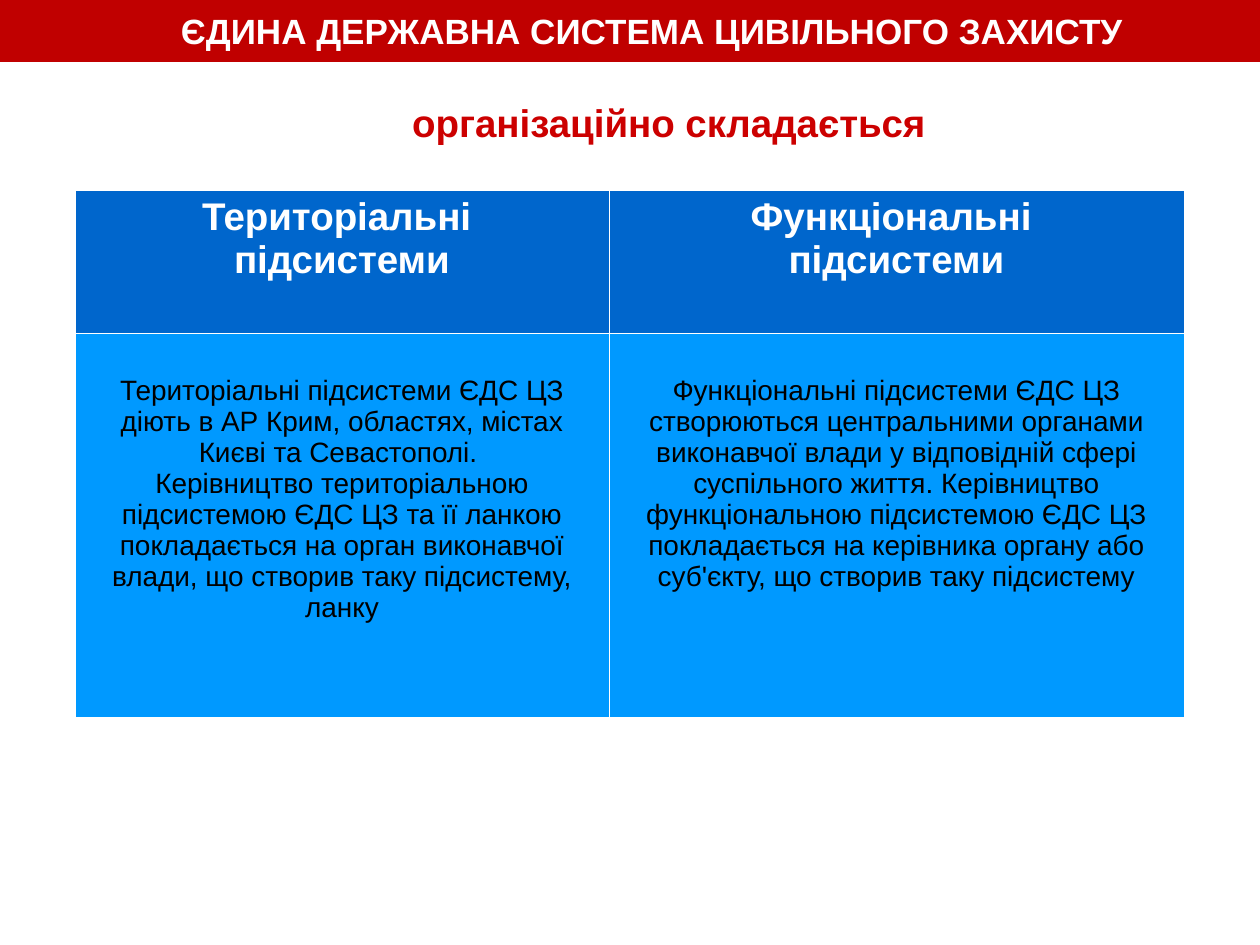
import pptx
import pptx.util
import pptx.dml.color
import pptx.enum.shapes
import pptx.enum.text
import pptx.oxml
import pptx.oxml.ns

RGBColor = pptx.dml.color.RGBColor
WHITE = RGBColor(255, 255, 255)
BLACK = RGBColor(0, 0, 0)
RED = RGBColor(0xCC, 0, 0)
BANNER = RGBColor(0xC0, 0, 0)
BLUE = RGBColor(0, 0x66, 0xCC)
SKY = RGBColor(0, 0x99, 0xFF)

HEADS = ["Територіальні \nпідсистеми", "Функціональні \nпідсистеми"]
BODIES = [
    "Територіальні підсистеми ЄДС ЦЗ діють в АР Крим, областях, містах "
    "Києві та Севастополі. \nКерівництво територіальною підсистемою ЄДС ЦЗ "
    "та її ланкою покладається на орган виконавчої влади, що створив таку "
    "підсистему, ланку",
    "Функціональні підсистеми ЄДС ЦЗ створюються центральними органами "
    "виконавчої влади у відповідній сфері суспільного життя. Керівництво "
    "функціональною підсистемою ЄДС ЦЗ покладається на керівника органу або "
    "суб'єкту, що створив таку підсистему",
]
COLS = [534, 575]
ROWS = [143, 384]


def px(n):
    return pptx.util.Emu(round(n * 914400 / 126))


def write(frame, text, size, color, bold):
    frame.text = text
    frame.word_wrap = True
    for para in frame.paragraphs:
        para.alignment = pptx.enum.text.PP_ALIGN.CENTER
        for run in para.runs:
            run.font.name = "Arial"
            run.font.size = pptx.util.Pt(size)
            run.font.bold = bold
            run.font.color.rgb = color


def add_label(slide, box, text, size, color, fill=None):
    rect = pptx.enum.shapes.MSO_SHAPE.RECTANGLE
    shape = slide.shapes.add_shape(rect, *map(px, box))
    shape.shadow.inherit = False
    shape.line.fill.background()
    if fill is None:
        shape.fill.background()
    else:
        shape.fill.solid()
        shape.fill.fore_color.rgb = fill
    shape.text_frame.vertical_anchor = pptx.enum.text.MSO_ANCHOR.MIDDLE
    write(shape.text_frame, text, size, color, True)


def add_edges(cell):
    props = cell._tc.get_or_add_tcPr()
    space = pptx.oxml.ns.nsdecls("a")
    for spot, side in enumerate("LRTB"):
        edge = pptx.oxml.parse_xml(
            f'<a:ln{side} {space} w="762"><a:solidFill>'
            f'<a:srgbClr val="{WHITE}"/></a:solidFill></a:ln{side}>')
        props.insert(spot, edge)


def fill_row(table, row, texts, size, color, bold, fill, top):
    for col, text in enumerate(texts):
        cell = table.cell(row, col)
        cell.fill.solid()
        cell.fill.fore_color.rgb = fill
        cell.margin_top = px(top)
        write(cell.text_frame, text, size, color, bold)
        add_edges(cell)


def add_grid(slide):
    box = (75, 190, sum(COLS), sum(ROWS))
    table = slide.shapes.add_table(2, 2, *map(px, box)).table
    for col, width in zip(table.columns, COLS):
        col.width = px(width)
    for row, height in zip(table.rows, ROWS):
        row.height = px(height)
    fill_row(table, 0, HEADS, 22, WHITE, True, BLUE, 6)
    fill_row(table, 1, BODIES, 16, BLACK, False, SKY, 42)


def main():
    deck = pptx.Presentation()
    deck.slide_width, deck.slide_height = px(1260), px(945)
    slide = deck.slides.add_slide(deck.slide_layouts[6])
    add_label(slide, (188, 91, 962, 62), "організаційно складається", 22, RED)
    add_grid(slide)
    add_label(slide, (-4, -2, 1312, 64),
              "ЄДИНА ДЕРЖАВНА СИСТЕМА ЦИВІЛЬНОГО ЗАХИСТУ", 20, WHITE, BANNER)
    deck.save("out.pptx")


if __name__ == "__main__":
    main()
